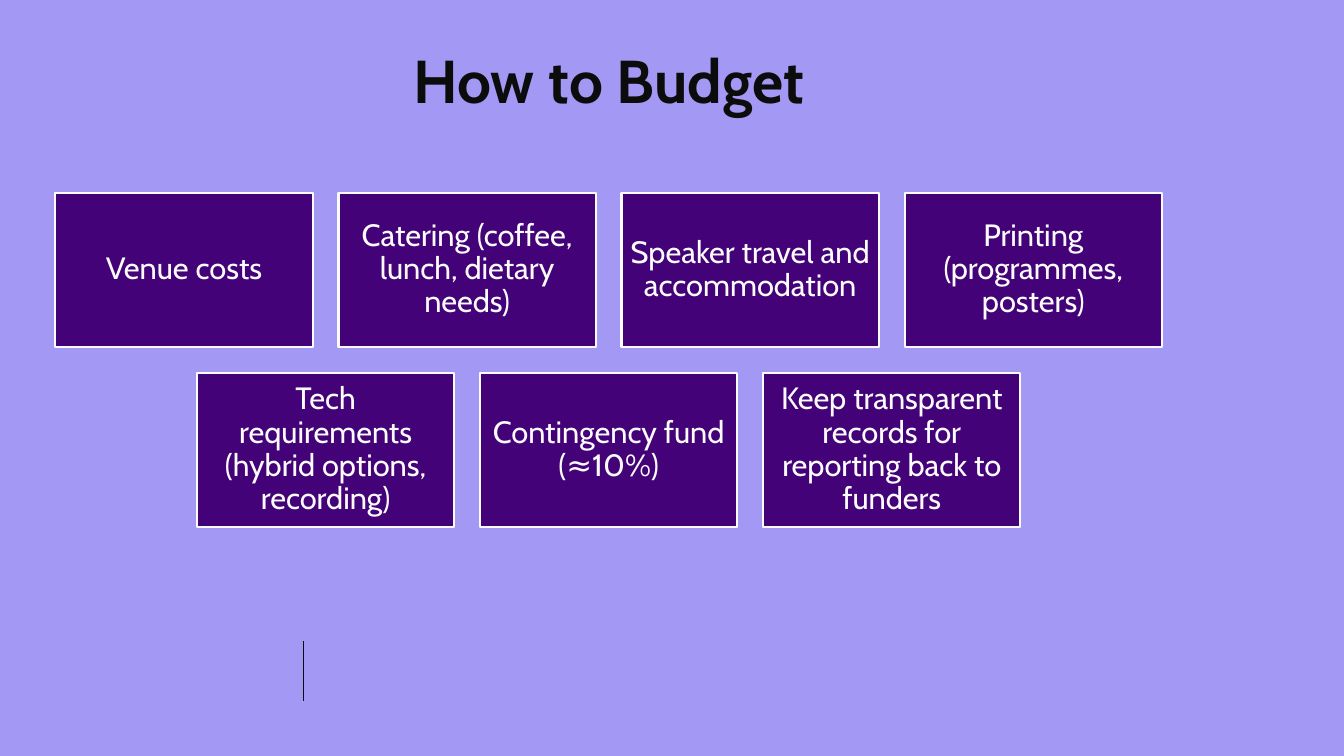
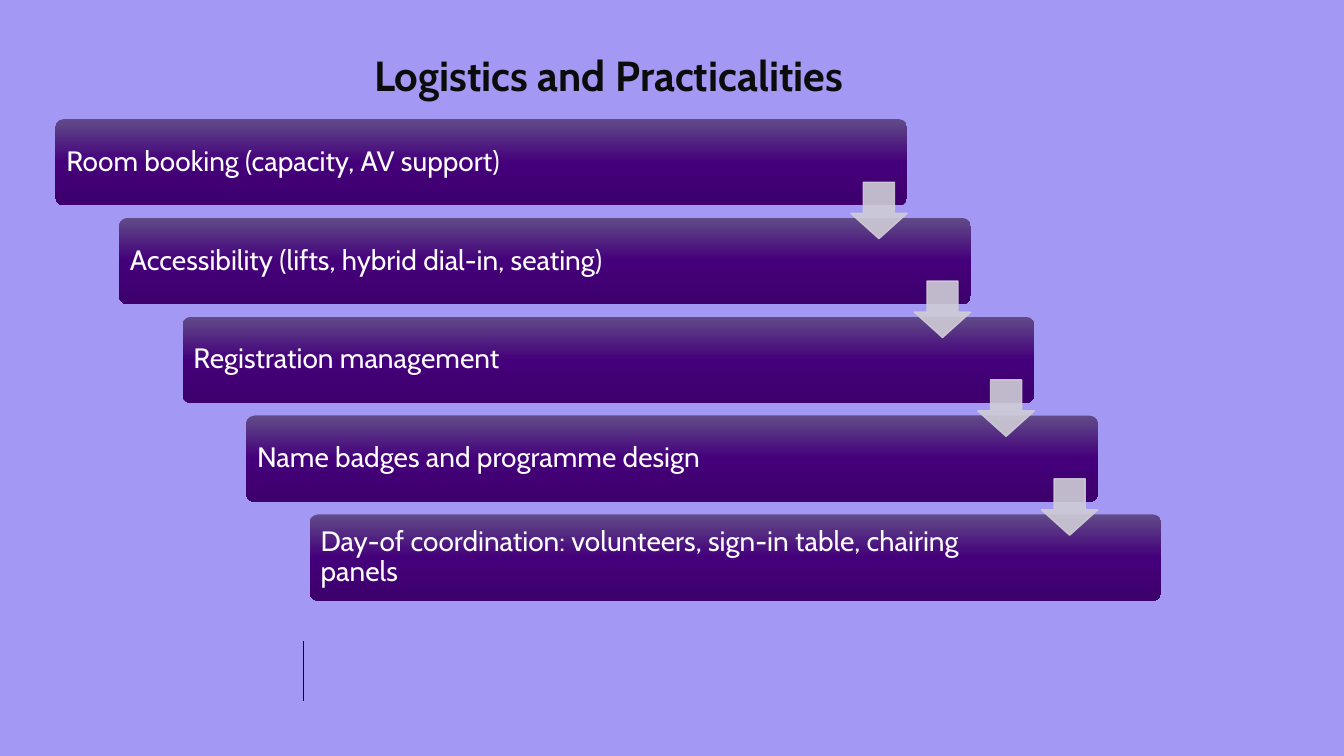
from copy import deepcopy

from pptx import Presentation
from pptx.dml.color import RGBColor
from pptx.enum import shapes, text
from pptx.oxml import ns, xmlchemy
from pptx.util import Pt

FONT = "Cabin"
LILAC, PURPLE, INK, WHITE, GREY = "A399F4", "440278", "0C0C0C", "FDFCFC", "CFCCD6"
BAR_GRADIENT = [(0, "614B89"), (0.5, "44007A"), (1, "3D006C")]
LEFT, WIDTH = 39.6, 790.4


def rgb(value):
    return RGBColor.from_string(value)


def write(sp, content, size, color=WHITE, bold=False, align=text.PP_ALIGN.CENTER,
          anchor=text.MSO_ANCHOR.MIDDLE, spacing=0.9, insets=(6.5, 6.5, 6.5, 6.5)):
    tf = sp.text_frame
    tf.word_wrap = True
    tf.auto_size = text.MSO_AUTO_SIZE.NONE
    tf.vertical_anchor = anchor
    tf.margin_left, tf.margin_top, tf.margin_right, tf.margin_bottom = map(Pt, insets)
    p = tf.paragraphs[0]
    p.alignment, p.line_spacing = align, spacing
    r = p.add_run()
    r.text = content
    r.font.name, r.font.size, r.font.bold = FONT, Pt(size), bold
    r.font.color.rgb = rgb(color)


prs = Presentation()
prs.slide_width, prs.slide_height = Pt(960), Pt(540)
background = prs.slide_master.background.fill
background.solid()
background.fore_color.rgb = rgb(LILAC)

# Slides with their title and footer rule
slides = []
for title, top, size in [("How to Budget", 41, 43.2),
                         ("Logistics and Practicalities", 42.5, 30)]:
    s = prs.slides.add_slide(prs.slide_layouts[5])
    sp = s.shapes.title
    sp.left, sp.top, sp.width, sp.height = Pt(LEFT), Pt(top), Pt(WIDTH), Pt(size)
    write(sp, title, size, INK, bold=True, anchor=text.MSO_ANCHOR.TOP,
          spacing=0.8, insets=(0, 0, 0, 0))
    rule = s.shapes.add_connector(shapes.MSO_CONNECTOR.STRAIGHT,
                                  Pt(216.7), Pt(458), Pt(216.7), Pt(500.4))
    rule.line.color.rgb = rgb(INK)
    rule.line.width = Pt(1)
    xmlchemy.OxmlElement("a:effectLst")
    rule._element.spPr.append(xmlchemy.OxmlElement("a:effectLst"))
    slides.append(s)
budget, logistics = slides

# Budget: rows of boxes, each row centred
BOX_W, BOX_H, GAP = 183.8, 110.2, 18.4
box_rows = [
    ["Venue costs", "Catering (coffee, lunch, dietary needs)",
     "Speaker travel and accommodation", "Printing (programmes, posters)"],
    ["Tech requirements (hybrid options, recording)", "Contingency fund (≈10%)",
     "Keep transparent records for reporting back to funders"],
]
for row, labels in enumerate(box_rows):
    row_width = len(labels) * (BOX_W + GAP) - GAP
    row_left = LEFT + (WIDTH - row_width) / 2
    for col, label in enumerate(labels):
        sp = budget.shapes.add_shape(
            shapes.MSO_SHAPE.RECTANGLE, Pt(row_left + col * (BOX_W + GAP)),
            Pt(137.6 + row * (BOX_H + GAP)), Pt(BOX_W), Pt(BOX_H))
        sp.shadow.inherit = False
        sp.fill.solid()
        sp.fill.fore_color.rgb = rgb(PURPLE)
        sp.line.color.rgb = rgb(WHITE)
        sp.line.width = Pt(1.5)
        write(sp, label, 22)

# Logistics: staircase of bars
BAR_W, BAR_H, STEP_X, STEP_Y, BAR_TOP = 608.4, 61.7, 45.4, 70.6, 85
steps = [
    "Room booking (capacity, AV support)",
    "Accessibility (lifts, hybrid dial-in, seating)",
    "Registration management",
    "Name badges and programme design",
    "Day-of coordination: volunteers, sign-in table, chairing panels",
]
for i, step in enumerate(steps):
    sp = logistics.shapes.add_shape(
        shapes.MSO_SHAPE.ROUNDED_RECTANGLE, Pt(LEFT + i * STEP_X),
        Pt(BAR_TOP + i * STEP_Y), Pt(BAR_W), Pt(BAR_H))
    sp.adjustments[0] = 0.1
    sp.shadow.inherit = False
    sp.line.fill.background()
    sp.fill.gradient()
    sp.fill.gradient_angle = 270
    stop_list = sp._element.spPr.find(".//" + ns.qn("a:gsLst"))
    stop_list.append(deepcopy(stop_list[-1]))
    for stop, (position, color) in zip(sp.fill.gradient_stops, BAR_GRADIENT):
        stop.position = position
        stop.color.rgb = rgb(color)
    write(sp, step, 20, align=text.PP_ALIGN.LEFT, insets=(6, 6, 91, 6))

# Arrows from each bar to the next, flush with the upper bar's right end
ARROW = 40.3
for i in range(len(steps) - 1):
    sp = logistics.shapes.add_shape(
        shapes.MSO_SHAPE.DOWN_ARROW, Pt(LEFT + BAR_W - ARROW + i * STEP_X),
        Pt(130.2 + i * STEP_Y), Pt(ARROW), Pt(ARROW))
    sp.adjustments[0], sp.adjustments[1] = 0.55, 0.45
    sp.shadow.inherit = False
    sp.fill.solid()
    sp.fill.fore_color.rgb = rgb(GREY)
    sp.line.color.rgb = rgb(GREY)
    sp.line.width = Pt(1)
    for color in sp._element.spPr.iter(ns.qn("a:srgbClr")):
        alpha = xmlchemy.OxmlElement("a:alpha")
        alpha.set("val", "90000")
        color.append(alpha)

prs.save("out.pptx")
